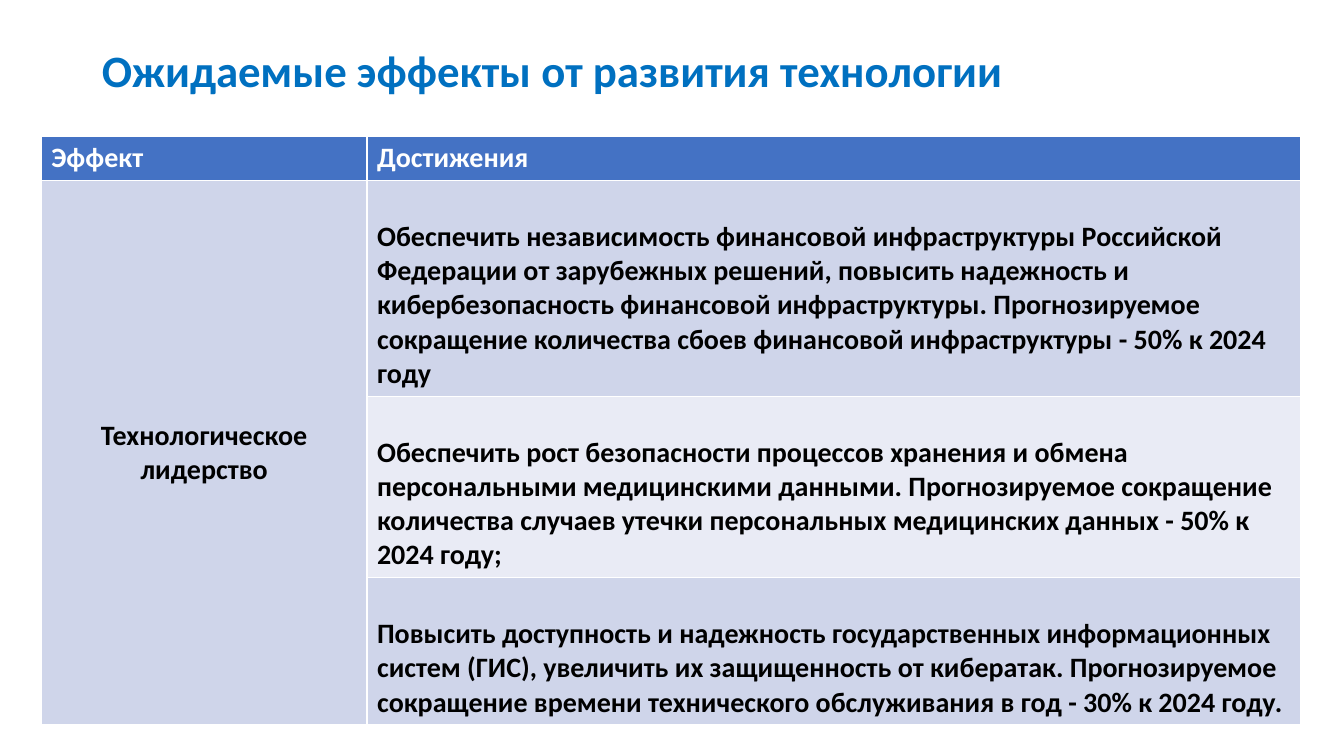
from pptx import Presentation
from pptx.dml.color import RGBColor
from pptx.enum.text import MSO_ANCHOR, PP_ALIGN
from pptx.util import Inches, Pt

TITLE = "Ожидаемые эффекты от развития технологии"
HEADERS = ["Эффект", "Достижения"]
EFFECT = "Технологическое лидерство"
ACHIEVEMENTS = [
    "Обеспечить независимость финансовой инфраструктуры Российской Федерации "
    "от зарубежных решений, повысить надежность и кибербезопасность финансовой "
    "инфраструктуры. Прогнозируемое сокращение количества сбоев финансовой "
    "инфраструктуры - 50% к 2024 году",
    "Обеспечить рост безопасности процессов хранения и обмена персональными "
    "медицинскими данными. Прогнозируемое сокращение количества случаев утечки "
    "персональных медицинских данных - 50% к 2024 году;",
    "Повысить доступность и надежность государственных информационных систем "
    "(ГИС), увеличить их защищенность от кибератак. Прогнозируемое сокращение "
    "времени технического обслуживания в год - 30% к 2024 году.",
]
COLUMN_WIDTHS = [3.23, 9.26]
ROW_HEIGHTS = [0.44, 2.14, 1.8, 1.46]
HEADER_FILL = "4472C4"
BAND_FILLS = ["CFD5EA", "E9EBF5"]


def color(value):
    return RGBColor.from_string(value)


def write_text(text_frame, text, size, font_color, alignment=PP_ALIGN.LEFT):
    text_frame.text = text
    paragraph = text_frame.paragraphs[0]
    paragraph.alignment = alignment
    font = paragraph.runs[0].font
    font.name = "Calibri"
    font.size = Pt(size)
    font.bold = True
    font.color.rgb = color(font_color)


def fill_cell(cell, text, fill, font_color="000000",
              alignment=PP_ALIGN.LEFT, anchor=MSO_ANCHOR.BOTTOM):
    cell.fill.solid()
    cell.fill.fore_color.rgb = color(fill)
    cell.vertical_anchor = anchor
    write_text(cell.text_frame, text, 20, font_color, alignment)


def add_title(slide):
    title = slide.shapes.title
    title.left, title.top = Inches(0.91), Inches(0)
    title.width, title.height = Inches(11.5), Inches(1.45)
    write_text(title.text_frame, TITLE, 32, "0070C0")
    title.text_frame.vertical_anchor = MSO_ANCHOR.MIDDLE
    title.text_frame.paragraphs[0].line_spacing = 0.9


def add_effects_table(slide):
    table = slide.shapes.add_table(
        len(ROW_HEIGHTS), len(COLUMN_WIDTHS), Inches(0.41), Inches(1.35),
        Inches(sum(COLUMN_WIDTHS)), Inches(sum(ROW_HEIGHTS))).table
    for column, width in zip(table.columns, COLUMN_WIDTHS):
        column.width = Inches(width)
    for row, height in zip(table.rows, ROW_HEIGHTS):
        row.height = Inches(height)

    for index, header in enumerate(HEADERS):
        fill_cell(table.cell(0, index), header, HEADER_FILL, "FFFFFF",
                  anchor=MSO_ANCHOR.TOP)
    effect_cell = table.cell(1, 0)
    effect_cell.merge(table.cell(len(ACHIEVEMENTS), 0))
    fill_cell(effect_cell, EFFECT, BAND_FILLS[0],
              alignment=PP_ALIGN.CENTER, anchor=MSO_ANCHOR.MIDDLE)
    for index, achievement in enumerate(ACHIEVEMENTS):
        fill_cell(table.cell(index + 1, 1), achievement, BAND_FILLS[index % 2])


def main():
    presentation = Presentation()
    presentation.slide_width = Inches(13.33)
    presentation.slide_height = Inches(7.5)
    slide = presentation.slides.add_slide(presentation.slide_layouts[5])
    add_title(slide)
    add_effects_table(slide)
    presentation.save("out.pptx")


if __name__ == "__main__":
    main()
